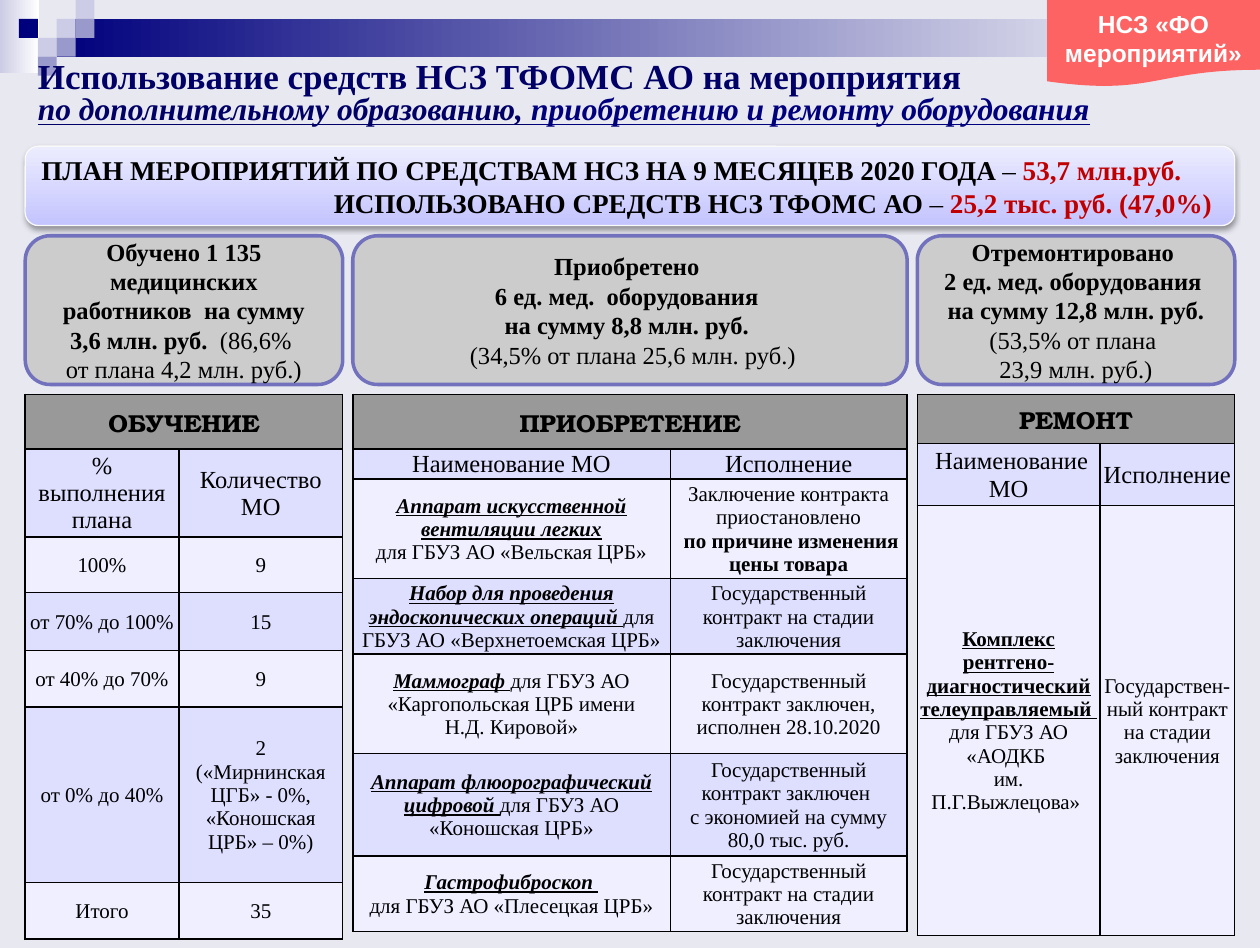
from lxml import etree
from pptx import Presentation, util as u
from pptx.dml.color import RGBColor
from pptx.enum import shapes, text
from pptx.oxml.ns import qn

WIDE, HIGH = 10, 7.52
UNIT = 0.15                    # side of a decorative square
EDGE, GAP = 0.2, 0.08          # page margin, gap between columns
SIDE, MID = 2.52, 4.4          # widths of outer and middle columns
LEFTS = [EDGE, EDGE + SIDE + GAP, EDGE + SIDE + MID + 2 * GAP]
CARD_TOP, GRID_TOP = 1.87, 3.13

SERIF, HEAD, SANS = "Times New Roman", "TeX Gyre Bonum", "Arial"
BLACK = RGBColor(0, 0, 0)
WHITE = RGBColor(255, 255, 255)
PAGE = RGBColor(0xE8, 0xE8, 0xF1)
NAVY = RGBColor(0, 0, 0x7D)
INK = RGBColor(0, 0, 0x66)
RED = RGBColor(0xC0, 0, 0)
CORAL = RGBColor(0xFD, 0x63, 0x63)
PALE = RGBColor(0xCC, 0xCC, 0xE6)
LILAC = RGBColor(0x99, 0x99, 0xCC)
FROST = RGBColor(0xF9, 0xF9, 0xF9)
LOW, TOP = RGBColor(0xC4, 0xC4, 0xFF), RGBColor(0xEC, 0xEC, 0xFF)
CARD, RIM = RGBColor(0xCC, 0xCC, 0xCC), RGBColor(0x71, 0x71, 0xBD)
GRAY = RGBColor(0x99, 0x99, 0x99)
BANDS = [RGBColor(0xDE, 0xDE, 0xFF), RGBColor(0xEF, 0xEF, 0xFF)]

KIND = shapes.MSO_SHAPE
CENTER, RIGHT = text.PP_ALIGN.CENTER, text.PP_ALIGN.RIGHT
MIDDLE = text.MSO_ANCHOR.MIDDLE

STAGE = "Государственный контракт на стадии заключения"
TRAIN = [
    ("% выполнения плана", "Количество МО"),
    ("100%", "9"),
    ("от 70% до 100%", "15"),
    ("от 40% до 70%", "9"),
    ("от 0% до 40%", "2\n(«Мирнинская ЦГБ» - 0%, «Коношская ЦРБ» – 0%)"),
    ("Итого", "35"),
]
BUY = [
    ("Наименование МО", "Исполнение"),
    ("biu:Аппарат искусственной вентиляции легких\nдля ГБУЗ АО «Вельская ЦРБ»",
     "Заключение контракта приостановлено\v|b: по причине изменения цены товара"),
    ("biu:Набор для проведения эндоскопических операций |"
     "для ГБУЗ АО «Верхнетоемская ЦРБ»", STAGE),
    ("biu:Маммограф |для ГБУЗ АО «Каргопольская ЦРБ имени\vН.Д. Кировой»",
     "Государственный контракт заключен, исполнен 28.10.2020"),
    ("biu:Аппарат флюорографический цифровой |для ГБУЗ АО «Коношская ЦРБ»",
     "Государственный контракт заключен \vс экономией на сумму 80,0 тыс. руб."),
    ("biu:Гастрофиброскоп \nдля ГБУЗ АО «Плесецкая ЦРБ»", STAGE),
]
REPAIR = [
    (" Наименование МО", "Исполнение"),
    ("bu:Комплекс рентгено-диагностический телеуправляемый \n"
     "для ГБУЗ АО «АОДКБ \vим. П.Г.Выжлецова» ",
     "Государствен-ный контракт на стадии заключения"),
]
CARDS = [
    "b:Обучено 1 135\vмедицинских работников  на сумму 3,6 млн. руб. |"
    " (86,6% \vот плана 4,2 млн. руб.)",
    "b:Приобретено \v6 ед. мед.  оборудования \vна сумму 8,8 млн. руб. \v|"
    " (34,5% от плана 25,6 млн. руб.)",
    "b:Отремонтировано \v2 ед. мед. оборудования \vна сумму 12,8 млн. руб. |"
    "(53,5% от плана \v23,9 млн. руб.)",
]


def write(frame, copy, size, face=SERIF, color=BLACK, align=None):
    """Lines are paragraphs, | parts runs, \\v breaks; b, i, u, r: style a run."""
    frame.word_wrap = True
    for n, line in enumerate(copy.split("\n")):
        par = frame.add_paragraph() if n else frame.paragraphs[0]
        par.alignment = align
        font = par.font
        font.size, font.name, font.color.rgb = u.Pt(size), face, color
        for part in line.split("|"):
            style, _, words = part.rpartition(":")
            for k, piece in enumerate(words.split("\v")):
                if k:
                    par.add_line_break()
                if not piece:
                    continue
                run = par.add_run()
                run.text = piece
                look = run.font
                look.size, look.name = u.Pt(size), face
                look.bold = "b" in style
                look.italic, look.underline = "i" in style, "u" in style
                look.color.rgb = RED if "r" in style else color


def block(slide, kind, left, top, wide, high, fill, rim=None, thick=1):
    """Add a shape; a pair of colours as fill makes a gradient."""
    shape = slide.shapes.add_shape(kind, *map(u.Inches, (left, top, wide, high)))
    shape.shadow.inherit = False
    if isinstance(fill, list):
        shape.fill.gradient()
        shape.fill.gradient_angle = 0
        for stop, color in zip(shape.fill.gradient_stops, fill):
            stop.color.rgb = color
    else:
        shape.fill.solid()
        shape.fill.fore_color.rgb = fill
    if rim is None:
        shape.line.fill.background()
    else:
        shape.line.color.rgb, shape.line.width = rim, u.Pt(thick)
    shape.text_frame.vertical_anchor = MIDDLE
    return shape


def shade(shape):
    glow = shape._element.spPr.find(qn("a:effectLst"))
    drop = etree.SubElement(glow, qn("a:outerShdw"), blurRad=str(u.Pt(3.1)),
                            dist=str(u.Pt(1.6)), dir="5400000", rotWithShape="0")
    tint = etree.SubElement(drop, qn("a:srgbClr"), val="000000")
    etree.SubElement(tint, qn("a:alpha"), val="38000")


def frame_cell(cell):
    props = cell._tc.get_or_add_tcPr()
    for n, side in enumerate(("lnL", "lnR", "lnT", "lnB")):
        line = etree.Element(qn("a:" + side), w=str(u.Pt(1)))
        paint = etree.SubElement(line, qn("a:solidFill"))
        etree.SubElement(paint, qn("a:srgbClr"), val=str(BLACK))
        props.insert(n, line)


def paint_cell(cell, color, pads):
    cell.fill.solid()
    cell.fill.fore_color.rgb = color
    cell.vertical_anchor = MIDDLE
    (cell.margin_left, cell.margin_top,
     cell.margin_right, cell.margin_bottom) = map(u.Inches, pads)
    frame_cell(cell)


def grid(slide, left, name, rows, wides, highs):
    table = slide.shapes.add_table(
        len(highs), 2, u.Inches(left), u.Inches(GRID_TOP),
        u.Inches(sum(wides)), u.Inches(sum(highs))).table
    for col, wide in zip(table.columns, wides):
        col.width = u.Inches(wide)
    for row, high in zip(table.rows, highs):
        row.height = u.Inches(high)
    for cell in table.rows[0].cells:
        paint_cell(cell, GRAY, (0.1, 0.05, 0.1, 0.05))
    table.cell(0, 0).merge(table.cell(0, 1))
    write(table.cell(0, 0).text_frame, "b:" + name, 14, HEAD, align=CENTER)
    for r, row in enumerate(rows):
        for c, copy in enumerate(row):
            cell = table.cell(r + 1, c)
            paint_cell(cell, BANDS[r % 2], (0.01, 0.01, 0.01, 0))
            write(cell.text_frame, copy, 12 if r else 14, align=CENTER)


def decor(slide):
    block(slide, KIND.RECTANGLE, 0, 0, 0.31, 0.58, [PALE, WHITE])
    block(slide, KIND.RECTANGLE, 3 * UNIT, UNIT, WIDE - 3 * UNIT, 2 * UNIT, [NAVY, WHITE])
    for col, row, color in [(3, 1, PALE), (4, 0, PALE), (4, 1, LILAC), (2, 2, PALE),
                            (1, 1, NAVY), (3, 2, LILAC), (2, 3, LILAC)]:
        block(slide, KIND.RECTANGLE, col * UNIT, row * UNIT, UNIT, UNIT, color)


def head(slide):
    title = slide.shapes.title
    title.left, title.top, title.width, title.height = map(
        u.Inches, (EDGE, 0.45, 9.53, 0.63))
    body = title.text_frame
    body.auto_size = text.MSO_AUTO_SIZE.NONE
    body.vertical_anchor = text.MSO_ANCHOR.TOP
    write(body, "b:Использование средств НСЗ ТФОМС АО на мероприятия \v|"
          "biu:по дополнительному образованию, |biu:приобретению и ремонту оборудования",
          20, color=INK, align=text.PP_ALIGN.LEFT)
    par = body.paragraphs[0]
    par.line_spacing = 0.8
    for run in par.runs[1:]:
        run.font.size = u.Pt(18)
    par.runs[-1].font.color.rgb = NAVY
    slide.shapes._spTree.append(title._element)  # above the decoration


def main():
    deck = Presentation()
    deck.slide_width, deck.slide_height = u.Inches(WIDE), u.Inches(HIGH)
    slide = deck.slides.add_slide(deck.slide_layouts[5])
    slide.background.fill.solid()
    slide.background.fill.fore_color.rgb = PAGE
    decor(slide)
    head(slide)

    # Plan banner
    plan = block(slide, KIND.ROUNDED_RECTANGLE, EDGE, 1.16, WIDE - 2 * EDGE, 0.63,
                 [LOW, TOP], FROST, 0.75)
    plan.fill.gradient_angle = 90
    shade(plan)
    write(plan.text_frame, "b:ПЛАН МЕРОПРИЯТИЙ ПО СРЕДСТВАМ НСЗ НА 9 МЕСЯЦЕВ 2020 ГОДА| – |"
          "br:53,7 млн.руб.\nb:ИСПОЛЬЗОВАНО СРЕДСТВ НСЗ ТФОМС АО |– |"
          "br:25,2 тыс. руб. (47,0%) ", 15.5, align=text.PP_ALIGN.LEFT)
    plan.text_frame.paragraphs[1].alignment = RIGHT

    # Summary cards
    for left, wide, copy in zip(LEFTS, (SIDE, MID, SIDE), CARDS):
        card = block(slide, KIND.FLOWCHART_ALTERNATE_PROCESS, left, CARD_TOP,
                     wide, 1.18, CARD, RIM, 2)
        write(card.text_frame, copy, 14, align=CENTER)

    # Tables
    grid(slide, LEFTS[0], "ОБУЧЕНИЕ", TRAIN, (1.22, 1.3),
         (0.43, 0.7, 0.44, 0.46, 0.45, 1.39, 0.45))
    grid(slide, LEFTS[1], "ПРИОБРЕТЕНИЕ", BUY, (2.52, 1.88),
         (0.43, 0.24, 0.79, 0.6, 0.79, 0.81, 0.6))
    grid(slide, LEFTS[2], "РЕМОНТ", REPAIR, (1.45, 1.07), (0.39, 0.49, 3.41))

    # Corner ribbon
    flag = block(slide, KIND.FLOWCHART_DOCUMENT, 8.31, 0, 1.69, 0.69, CORAL)
    flag.text_frame.margin_top = u.Inches(0.1)
    write(flag.text_frame, "b:НСЗ «ФО мероприятий»", 14, SANS, WHITE, CENTER)
    deck.save("out.pptx")


if __name__ == "__main__":
    main()
